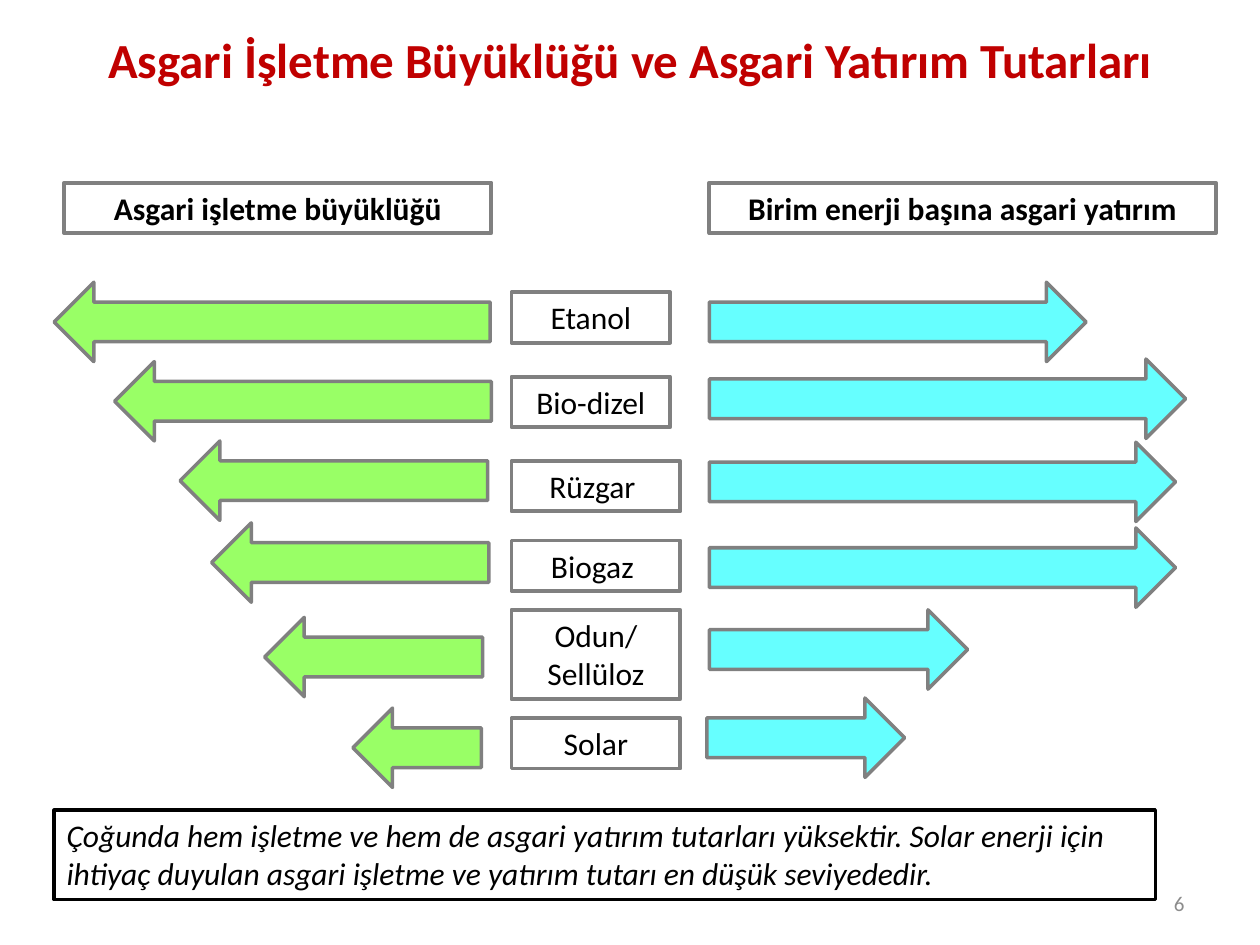
from dataclasses import dataclass

from pptx import Presentation
from pptx.dml.color import RGBColor
from pptx.enum.shapes import MSO_SHAPE as Shape
from pptx.enum.text import MSO_ANCHOR as Anchor, PP_ALIGN as Align
from pptx.util import Inches, Pt


@dataclass(frozen=True)
class Theme:
    font: str = "Calibri"
    red: str = "C00000"
    black: str = "000000"
    white: str = "FFFFFF"
    edge: str = "808080"
    pale: str = "8C8C8C"
    green: str = "99FF66"
    cyan: str = "66FFFF"
    title: int = 28
    body: int = 18
    small: int = 12
    frame: float = 2.25
    line: float = 2


T = Theme()
ARROW = 0.63  # arrow height
BOX = 0.4     # height of a one-line box

# name, (box top, width, height), (left arrow x, y, width), (right arrow x, y, width)
ROWS = [
    ("Etanol", (2.32, 1.26, BOX), (0.43, 2.24, 3.46), (5.63, 2.24, 2.99)),
    ("Bio-dizel", (2.99, 1.26, BOX), (0.91, 2.87, 2.99), (5.63, 2.85, 3.78)),
    ("Rüzgar ", (3.66, 1.34, BOX), (1.43, 3.5, 2.44), (5.63, 3.51, 3.7)),
    ("Biogaz ", (4.29, 1.34, BOX), (1.68, 4.15, 2.2), (5.63, 4.19, 3.7)),
    ("Odun/ Sellüloz", (4.84, 1.34, 0.71), (2.1, 4.9, 1.73), (5.63, 4.84, 2.05)),
    ("Solar", (5.7, 1.34, BOX), (2.8, 5.62, 1.02), (5.61, 5.54, 1.57)),
]


def write(shape, text, size=T.body, color=T.black, align=Align.CENTER,
          anchor=Anchor.TOP, **style):
    frame = shape.text_frame
    frame.word_wrap = True
    frame.vertical_anchor = anchor
    para = frame.paragraphs[0]
    para.alignment = align
    run = para.add_run()
    run.text = text
    look = {"name": T.font, "size": Pt(size), **style}
    for key, val in look.items():
        setattr(run.font, key, val)
    run.font.color.rgb = RGBColor.from_string(color)


def draw(slide, kind, box, fill=None, edge=T.edge, width=T.line):
    shape = slide.shapes.add_shape(kind, *map(Inches, box))
    shape.shadow.inherit = False
    if fill:
        shape.fill.solid()
        shape.fill.fore_color.rgb = RGBColor.from_string(fill)
    else:
        shape.fill.background()
    shape.line.color.rgb = RGBColor.from_string(edge)
    shape.line.width = Pt(width)
    return shape


def label(slide, box, text, **style):
    write(draw(slide, Shape.RECTANGLE, box, width=T.frame), text, **style)


def plain(slide, box, text, **style):
    area = slide.shapes.add_textbox(*map(Inches, box))
    write(area, text, anchor=Anchor.MIDDLE, **style)


def heads(slide, top):
    label(slide, (0.51, top, 3.39, BOX), "Asgari işletme büyüklüğü", bold=True)
    label(slide, (5.63, top, 4.02, BOX), "Birim enerji başına asgari yatırım",
          bold=True)


def chart(slide, mid):
    """Draw each energy source between its size and investment arrows."""
    for name, (top, width, high), left, right in ROWS:
        draw(slide, Shape.LEFT_ARROW, (*left, ARROW), T.green)
        draw(slide, Shape.RIGHT_ARROW, (*right, ARROW), T.cyan)
        label(slide, (mid, top, width, high), name)


def note(slide, box):
    shape = draw(slide, Shape.RECTANGLE, box, T.white, T.black)
    write(shape, "Çoğunda hem işletme ve hem de asgari yatırım tutarları "
          "yüksektir. Solar enerji için ihtiyaç duyulan asgari işletme ve "
          "yatırım tutarı en düşük seviyededir.",
          align=Align.LEFT, italic=True)


def main():
    deck = Presentation()
    deck.slide_width, deck.slide_height = Inches(10), Inches(7.5)
    slide = deck.slides.add_slide(deck.slide_layouts[6])

    # Title and column heads
    plain(slide, (0.5, 0.13, 9, 0.67),
          "Asgari İşletme Büyüklüğü ve Asgari Yatırım Tutarları",
          size=T.title, color=T.red, bold=True)
    heads(slide, 1.45)

    # Arrows and energy sources
    chart(slide, 4.06)

    # Page number and closing note
    plain(slide, (7.17, 6.97, 2.33, 0.4), "6",
          size=T.small, color=T.pale, align=Align.RIGHT)
    note(slide, (0.43, 6.43, 8.74, 0.71))

    deck.save("out.pptx")


if __name__ == "__main__":
    main()
